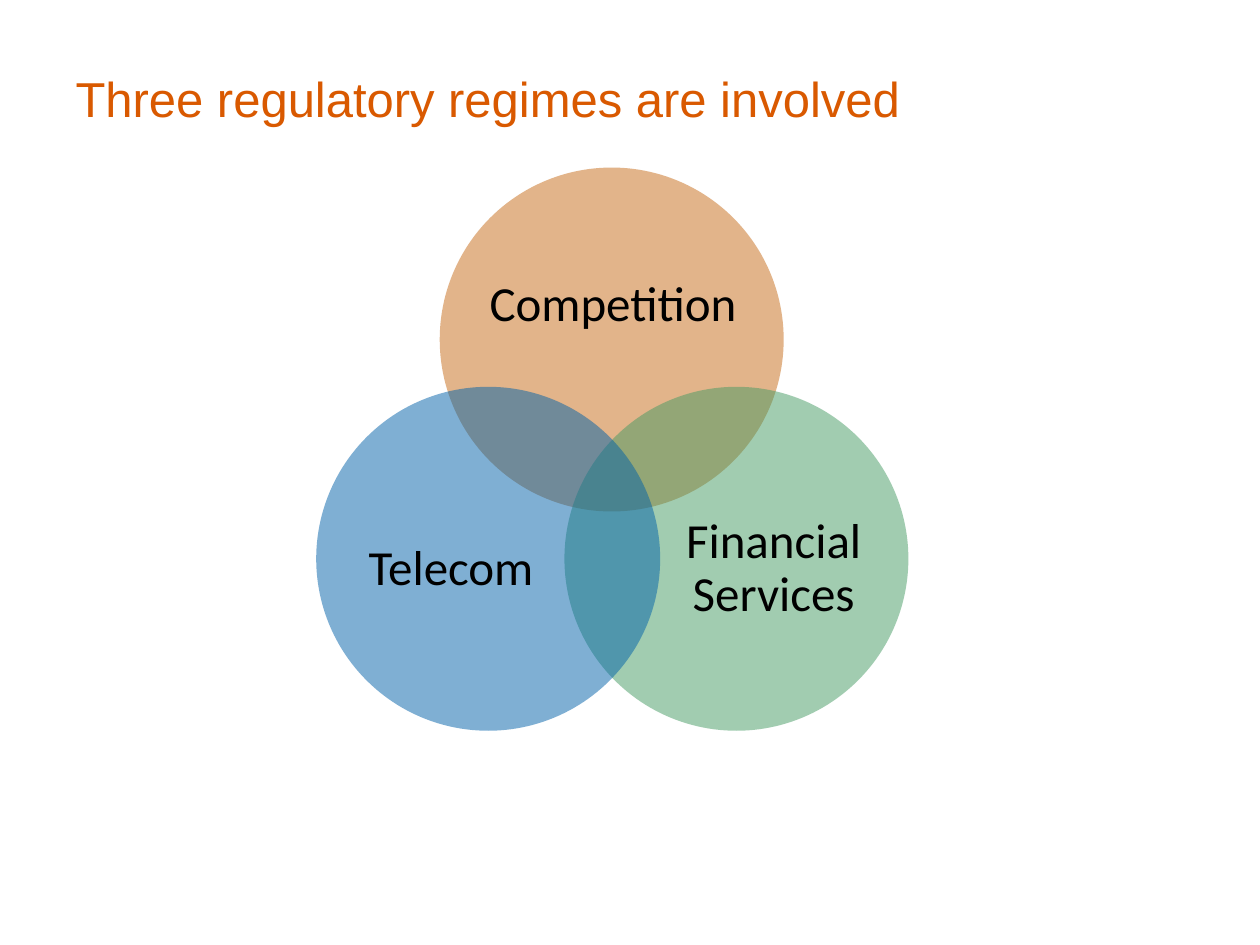
from dataclasses import dataclass

from lxml import etree
from pptx import Presentation
from pptx.dml.color import RGBColor
from pptx.enum.shapes import MSO_SHAPE as Shape
from pptx.enum.text import MSO_ANCHOR as Anchor, PP_ALIGN as Align
from pptx.oxml.ns import qn
from pptx.util import Inches, Pt


@dataclass(frozen=True)
class Theme:
    title: str = "D95900"
    label: str = "000000"
    competition: str = "C66A16"
    finance: str = "459A63"
    telecom: str = "0061A9"
    title_font: str = "Arial"
    label_font: str = "Calibri"
    text_size: int = 28
    circle_opacity: int = 50


THEME = Theme()
DIAMETER = 2.73
TOP_LABEL_SIZE = (2.01, 1.23)
LOWER_LABEL_SIZE = (1.64, 1.5)


def style_text(paragraph, font_name, color):
    for run in paragraph.runs:
        run.font.name = font_name
        run.font.size = Pt(THEME.text_size)
        run.font.color.rgb = RGBColor.from_string(color)


def set_title(slide, text):
    title = slide.shapes.title
    title.left, title.top = Inches(0.5), Inches(0.25)
    title.width, title.height = Inches(9), Inches(1.05)
    frame = title.text_frame
    frame.text = text
    frame.vertical_anchor = Anchor.MIDDLE
    heading = frame.paragraphs[0]
    heading.alignment = Align.LEFT
    style_text(heading, THEME.title_font, THEME.title)


def add_circle(venn, left, top, color):
    circle = venn.shapes.add_shape(
        Shape.OVAL, Inches(left), Inches(top), Inches(DIAMETER), Inches(DIAMETER))
    circle.shadow.inherit = False
    circle.line.fill.background()
    circle.fill.solid()
    circle.fill.fore_color.rgb = RGBColor.from_string(color)
    tint = circle.fill._xPr.find(qn("a:solidFill"))[0]
    etree.SubElement(tint, qn("a:alpha"), val=str(THEME.circle_opacity * 1000))


def add_label(venn, text, left, top, size):
    width, height = size
    label = venn.shapes.add_textbox(
        Inches(left), Inches(top), Inches(width), Inches(height))
    frame = label.text_frame
    frame.word_wrap = True
    frame.vertical_anchor = Anchor.MIDDLE
    frame.margin_left = frame.margin_right = 0
    frame.margin_top = frame.margin_bottom = 0
    frame.text = text
    name = frame.paragraphs[0]
    name.alignment = Align.CENTER
    name.line_spacing = 0.9
    style_text(name, THEME.label_font, THEME.label)


def main():
    deck = Presentation()
    deck.slide_width, deck.slide_height = Inches(10), Inches(7.5)
    slide = deck.slides.add_slide(deck.slide_layouts[5])
    set_title(slide, "Three regulatory regimes are involved")

    regimes = [
        ("Competition", THEME.competition, (3.49, 1.33), (3.86, 1.81), TOP_LABEL_SIZE),
        ("Financial Services", THEME.finance, (4.48, 3.07), (5.32, 3.77), LOWER_LABEL_SIZE),
        ("Telecom", THEME.telecom, (2.51, 3.07), (2.76, 3.77), LOWER_LABEL_SIZE),
    ]
    venn = slide.shapes.add_group_shape()
    for name, color, circle_corner, label_corner, label_size in regimes:
        add_circle(venn, *circle_corner, color)
        add_label(venn, name, *label_corner, label_size)

    deck.save("out.pptx")


if __name__ == "__main__":
    main()
